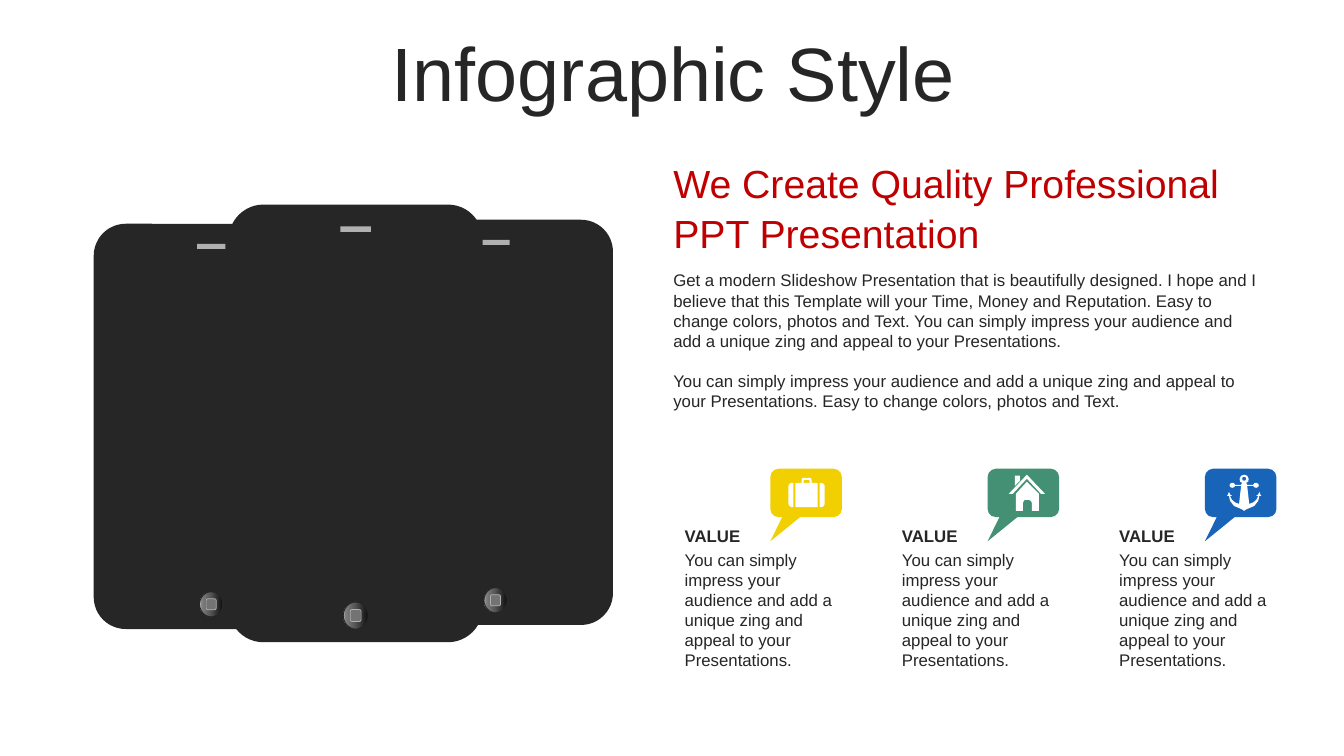
"""Build the infographic slide with three phones and three value columns."""
from copy import deepcopy

from pptx import Presentation
from pptx.dml.color import RGBColor
from pptx.enum.shapes import MSO_SHAPE
from pptx.enum.text import MSO_ANCHOR, MSO_AUTO_SIZE, PP_ALIGN
from pptx.oxml.ns import qn
from pptx.util import Inches, Pt

INK = RGBColor(0x26, 0x26, 0x26)
RED = RGBColor(0xC0, 0x00, 0x00)
WHITE = RGBColor(0xFF, 0xFF, 0xFF)
SILVER = RGBColor(0xB0, 0xB0, 0xB0)
GRAY = RGBColor(0x73, 0x73, 0x73)
YELLOW = RGBColor(0xF1, 0xCF, 0x01)
GREEN = RGBColor(0x44, 0x90, 0x74)
BLUE = RGBColor(0x17, 0x64, 0xB9)
BUTTON_STOPS = [
    (0, RGBColor(0x0F, 0x0F, 0x0F)),
    (0.56, RGBColor(0x59, 0x59, 0x59)),
    (0.91, RGBColor(0x80, 0x80, 0x80)),
    (1, RGBColor(0xBF, 0xBF, 0xBF)),
]

presentation = Presentation()
presentation.slide_width = Inches(13.33)
presentation.slide_height = Inches(7.5)
slide = presentation.slides.add_slide(presentation.slide_layouts[5])
shapes = slide.shapes


def add_plain(preset, box, color):
    part = shapes.add_shape(preset, *[Inches(value) for value in box])
    part.shadow.inherit = False
    part.fill.solid()
    part.fill.fore_color.rgb = color
    part.line.fill.background()
    return part


def write_text(holder, box, lines, size, color=INK, bold=False, frame_format=None, line_format=None):
    for side, value in zip(("left", "top", "width", "height"), box):
        setattr(holder, side, Inches(value))
    frame = holder.text_frame
    frame.text = "\n".join(lines)
    for key, value in {"word_wrap": True, "auto_size": MSO_AUTO_SIZE.NONE, **(frame_format or {})}.items():
        setattr(frame, key, value)
    for paragraph in frame.paragraphs:
        for key, value in (line_format or {}).items():
            setattr(paragraph, key, value)
        font = paragraph.runs[0].font
        for key, value in {"name": "Arial", "size": Pt(size), "bold": bold}.items():
            setattr(font, key, value)
        font.color.rgb = color
    return frame


# Phones: left, top and scale
PHONES = [(0.93, 2.22, 1), (3.75, 2.18, 1), (2.27, 2.03, 1.08)]
for left, top, scale in PHONES:
    center = left + 2.33 * scale / 2
    body, speaker, button, button_mark = [
        add_plain(preset, (center - width * scale / 2, top + drop * scale, width * scale, height * scale), color)
        for preset, drop, width, height, color in [
            (MSO_SHAPE.ROUNDED_RECTANGLE, 0, 2.33, 4.02, INK),
            (MSO_SHAPE.RECTANGLE, 0.2, 0.28, 0.05, SILVER),
            (MSO_SHAPE.OVAL, 3.65, 0.23, 0.25, INK),
            (MSO_SHAPE.ROUNDED_RECTANGLE, 3.72, 0.1, 0.11, GRAY),
        ]
    ]
    body.adjustments[0] = 0.136
    button.fill.gradient()
    button.fill.gradient_angle = 180
    stop_list = button.element.spPr.find(qn("a:gradFill")).find(qn("a:gsLst"))
    for stop in list(stop_list):
        stop_list.append(deepcopy(stop))
    for stop, (position, color) in zip(button.fill.gradient_stops, BUTTON_STOPS):
        stop.position = position
        stop.color.rgb = color
    for part, color, width in [(button, INK, 0), (button_mark, SILVER, 0.5)]:
        part.line.color.rgb = color
        part.line.width = Pt(width)

write_text(
    shapes.title, (0.35, 0.37, 12.66, 0.79), ["Infographic Style"], 54,
    frame_format={"vertical_anchor": MSO_ANCHOR.MIDDLE},
    line_format={"alignment": PP_ALIGN.CENTER, "line_spacing": 0.9, "space_before": Pt(10)},
)
write_text(
    shapes.add_textbox(0, 0, 0, 0), (6.58, 1.64, 6.03, 0.9),
    ["We Create Quality Professional", "PPT Presentation"], 28, RED,
    frame_format={"vertical_anchor": MSO_ANCHOR.MIDDLE},
    line_format={"line_spacing": Pt(30), "space_before": Pt(5.6)},
)
introduction = write_text(
    shapes.add_textbox(0, 0, 0, 0), (6.58, 2.63, 6.03, 1.51),
    [
        "Get a modern Slideshow Presentation that is beautifully designed. I hope and I believe that "
        "this Template will your Time, Money and Reputation. Easy to change colors, photos and Text. "
        "You can simply impress your audience and add a unique zing and appeal to your Presentations.",
        "You can simply impress your audience and add a unique zing and appeal to your Presentations. "
        "Easy to change colors, photos and Text.",
    ], 12,
)
introduction.paragraphs[1].space_before = Pt(14.5)

# Icon outlines in hundredths of an inch
SUITCASE = [
    [(31, 5), (33, 5), (35, 6), (36, 8), (36, 26), (35, 28), (33, 29), (31, 29)],
    [(5, 5), (3, 5), (1, 6), (0, 8), (0, 26), (1, 28), (3, 29), (5, 29)],
    [(16, 2), (15, 3), (15, 5), (21, 5), (21, 3), (20, 2)],
    [(14, 0), (22, 0), (23, 2), (23, 5), (29, 5), (29, 29), (7, 29), (7, 5), (13, 5), (13, 2)],
]
HOUSE = [
    [(18, 7), (30, 19), (30, 36), (23, 36), (23, 28), (22, 26), (20, 25), (16, 25),
     (15, 26), (14, 28), (14, 36), (7, 36), (7, 19)],
    [(6, 1), (11, 1), (11, 6), (6, 11)],
    [(18, 0), (36, 19), (32, 19), (18, 4), (4, 19), (0, 19)],
]
ANCHOR_HALF = [
    (0, 0), (3, 1), (4.5, 4), (4, 7), (2, 8), (3, 10), (9, 10), (10, 8.5), (12, 8), (14, 9),
    (14.5, 10.5), (14, 12), (12, 13), (10, 12.5), (9, 11), (3, 11), (5, 29), (9, 27.5),
    (12, 25), (14, 21), (12, 21), (14, 19.5), (15, 17), (16, 19.5), (17, 21), (15, 21),
    (14, 26), (10, 31), (3, 34), (1, 35), (0, 36),
]
ANCHOR = [
    [(17 + x, y) for x, y in ANCHOR_HALF] + [(17 - x, y) for x, y in ANCHOR_HALF[-2:0:-1]],
    [(17, 2), (18.5, 2.5), (19, 4), (18.5, 5.5), (17, 6), (15.5, 5.5), (15, 4), (15.5, 2.5)],
]

COLUMN_LEFT = 6.79
COLUMN_STEP = 4.31 / 2
NO_INSETS = dict.fromkeys(("margin_left", "margin_top", "margin_right", "margin_bottom"), 0)
VALUES = [(YELLOW, SUITCASE, 1.03, 4.74), (GREEN, HOUSE, 1.06, 4.71), (BLUE, ANCHOR, 1.07, 4.71)]
for index, (color, outlines, icon_offset, icon_top) in enumerate(VALUES):
    left = COLUMN_LEFT + index * COLUMN_STEP
    bubble = add_plain(MSO_SHAPE.ROUNDED_RECTANGULAR_CALLOUT, (left + 0.85, 4.65, 0.71, 0.48), color)
    for number, value in enumerate((-0.5, 1, 0.17)):
        bubble.adjustments[number] = value

    first, *others = outlines
    builder = shapes.build_freeform(first[0][0] * 10, first[0][1] * 10, scale=Inches(1) / 1000)
    builder.add_line_segments([(x * 10, y * 10) for x, y in first[1:]], close=True)
    for outline in others:
        (start_x, start_y), *rest = outline
        builder.move_to(start_x * 10, start_y * 10)
        builder.add_line_segments([(x * 10, y * 10) for x, y in rest], close=True)
    icon = builder.convert_to_shape(Inches(left + icon_offset), Inches(icon_top))
    icon.shadow.inherit = False
    icon.fill.solid()
    icon.fill.fore_color.rgb = WHITE
    icon.line.fill.background()

    for top, height, text, bold in [
        (5.22, 0.2, "VALUE", True),
        (5.45, 1.21, "You can simply impress your audience and add a unique zing "
                     "and appeal to your Presentations.", False),
    ]:
        write_text(shapes.add_textbox(0, 0, 0, 0), (left, top, 1.51, height), [text], 12,
                   bold=bold, frame_format=NO_INSETS)

presentation.save("out.pptx")
